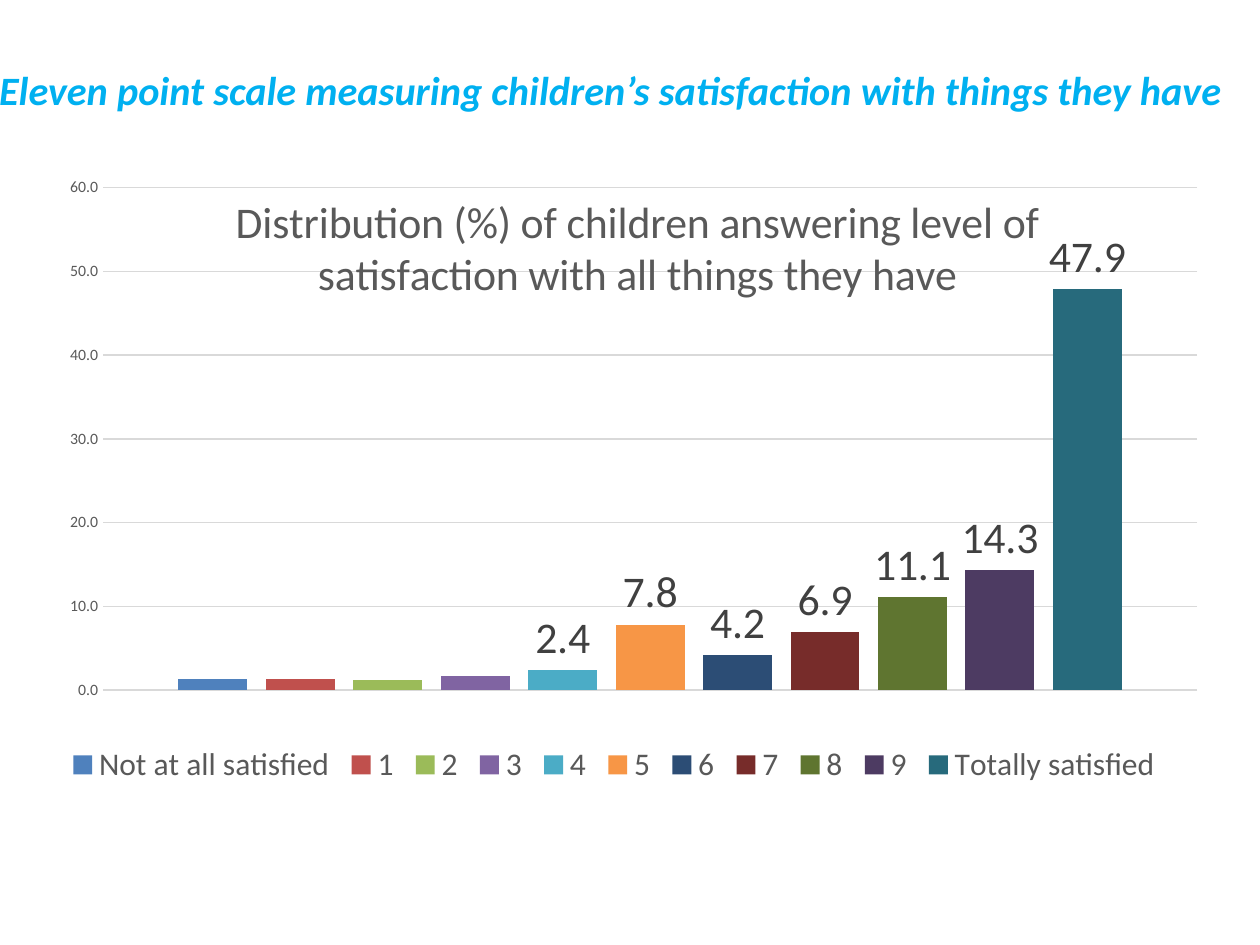
from lxml.etree import SubElement
from pptx import Presentation
from pptx.chart.data import CategoryChartData
from pptx.dml.color import RGBColor
from pptx.enum.chart import XL_CHART_TYPE as ChartType
from pptx.enum.chart import XL_LABEL_POSITION as LabelPosition
from pptx.enum.chart import XL_LEGEND_POSITION as LegendPosition
from pptx.enum.chart import XL_TICK_MARK as TickMark
from pptx.enum.text import MSO_ANCHOR as Anchor
from pptx.enum.text import MSO_AUTO_SIZE as AutoSize
from pptx.enum.text import PP_ALIGN as Align
from pptx.oxml.ns import qn
from pptx.util import Cm, Pt

COLORS = {"heading": "00B0F0", "text": "595959", "label": "404040", "grid": "D9D9D9"}

# Answer, share of children in percent, bar colour
ANSWERS = [
    ("Not at all satisfied", 1.3, "4F81BD"),
    ("1", 1.3, "C0504D"),
    ("2", 1.2, "9BBB59"),
    ("3", 1.7, "8064A2"),
    ("4", 2.4, "4BACC6"),
    ("5", 7.8, "F79646"),
    ("6", 4.2, "2C4D75"),
    ("7", 6.9, "772C2A"),
    ("8", 11.1, "5F7530"),
    ("9", 14.3, "4D3B62"),
    ("Totally satisfied", 47.9, "276A7C"),
]
LABEL_MINIMUM = 2
NUMBER_FORMAT = "###0.0"


class SlideBuilder:
    font_name = "Calibri"

    def __init__(self, slide):
        self.slide = slide

    def style(self, font, size, color, bold=False, italic=False):
        font.name, font.size = self.font_name, Pt(size)
        font.bold, font.italic = bold, italic
        font.color.rgb = RGBColor.from_string(color)

    def place(self, element, index, **fractions):
        """Lay out a chart part by fractions of the chart area."""
        for old in element.findall(qn("c:layout")):
            element.remove(old)
        layout = SubElement(element, qn("c:layout"))
        element.insert(index, layout)
        manual = SubElement(layout, qn("c:manualLayout"))
        if element.tag == qn("c:plotArea"):
            SubElement(manual, qn("c:layoutTarget"), val="inner")
        for key in ("x", "y"):
            SubElement(manual, qn(f"c:{key}Mode"), val="edge")
        for key, value in fractions.items():
            SubElement(manual, qn(f"c:{key}"), val=str(value))

    def heading(self, text, left, top, width, height):
        title = self.slide.shapes.title
        title.left, title.top, title.width, title.height = left, top, width, height
        frame = title.text_frame
        frame.text = text
        frame.word_wrap = True
        frame.auto_size = AutoSize.NONE
        frame.vertical_anchor = Anchor.BOTTOM
        frame.margin_left = frame.margin_right = 0
        paragraph = frame.paragraphs[0]
        paragraph.alignment = Align.CENTER
        self.style(paragraph.font, 23, COLORS["heading"], bold=True, italic=True)
        paragraph.runs[0].font.size = Pt(23)

    def column_chart(self, title, answers, left, top, width, height):
        data = CategoryChartData(number_format=NUMBER_FORMAT)
        data.categories = ["1"]
        for name, share, _ in answers:
            data.add_series(name, [share])
        chart = self.slide.shapes.add_chart(
            ChartType.COLUMN_CLUSTERED, left, top, width, height, data
        ).chart
        self.style(chart.font, 10, COLORS["text"])
        self.chart_title(chart, title)
        self.axes(chart)
        self.bars(chart.plots[0], answers)
        self.legend(chart)
        self.place(chart._chartSpace.chart.plotArea, 0, x=0.045, y=0.035, w=0.921, h=0.779)

    def chart_title(self, chart, text):
        frame = chart.chart_title.text_frame
        frame.text = text
        self.style(frame.paragraphs[0].font, 25, COLORS["text"])
        element = chart._chartSpace.chart.find(qn("c:title"))
        self.place(element, 1, x=0.15, y=0.03)
        for old in element.findall(qn("c:overlay")):
            element.remove(old)
        overlay = SubElement(element, qn("c:overlay"), val="1")
        element.insert(2, overlay)

    def axes(self, chart):
        chart.category_axis.visible = False
        axis = chart.value_axis
        axis.minimum_scale, axis.maximum_scale, axis.major_unit = 0, 60, 10
        axis.major_tick_mark = axis.minor_tick_mark = TickMark.NONE
        axis.format.line.fill.background()
        axis.tick_labels.number_format = NUMBER_FORMAT
        axis.tick_labels.number_format_is_linked = False
        self.style(axis.tick_labels.font, 9, COLORS["text"])
        grid = axis.major_gridlines.format.line
        grid.width = Pt(0.75)
        grid.color.rgb = RGBColor.from_string(COLORS["grid"])

    def bars(self, plot, answers):
        plot.gap_width, plot.overlap = 219, -27
        plot.vary_by_categories = False
        for series, (_, share, color) in zip(plot.series, answers):
            series.format.fill.solid()
            series.format.fill.fore_color.rgb = RGBColor.from_string(color)
            if share >= LABEL_MINIMUM:
                labels = series.data_labels
                labels.show_value = True
                labels.number_format = NUMBER_FORMAT
                labels.number_format_is_linked = False
                labels.position = LabelPosition.OUTSIDE_END
                self.style(labels.font, 25, COLORS["label"])

    def legend(self, chart):
        chart.has_legend = True
        legend = chart.legend
        legend.position = LegendPosition.BOTTOM
        legend.include_in_layout = False
        self.style(legend.font, 18, COLORS["text"])
        self.place(chart._chartSpace.chart.find(qn("c:legend")), 1, x=0.01, y=0.89, w=0.93, h=0.08)


def main():
    deck = Presentation()
    deck.slide_width, deck.slide_height = Cm(25.4), Cm(19.05)
    title_only = deck.slide_layouts[5]
    builder = SlideBuilder(deck.slides.add_slide(title_only))

    # Heading
    builder.heading(
        "Eleven point scale measuring children’s satisfaction with things they have",
        Cm(-0.4), Cm(1.22), Cm(25.45), Cm(1.2),
    )

    # Distribution of answers
    builder.column_chart(
        "Distribution (%) of children answering level of satisfaction with all things they have",
        ANSWERS, Cm(1), Cm(3.33), Cm(23.95), Cm(13),
    )
    deck.save("out.pptx")


if __name__ == "__main__":
    main()
